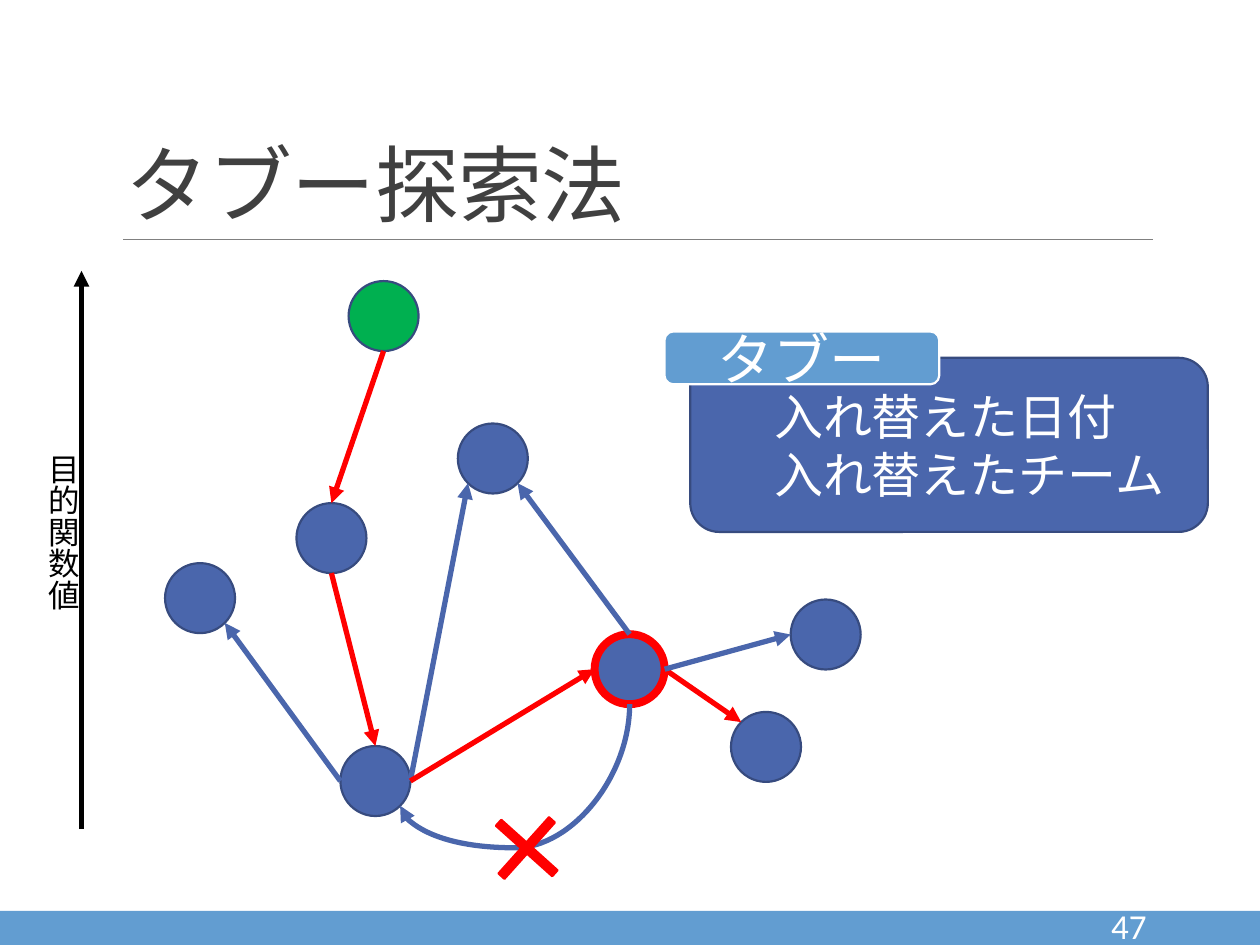
from dataclasses import dataclass
from math import sqrt

from lxml import etree
from pptx import Presentation
from pptx.dml.color import RGBColor
from pptx.enum.shapes import MSO_CONNECTOR, MSO_SHAPE
from pptx.enum.text import MSO_ANCHOR, PP_ALIGN
from pptx.oxml.ns import qn
from pptx.util import Pt

STRAIGHT, CURVE = MSO_CONNECTOR.STRAIGHT, MSO_CONNECTOR.CURVE
OVAL, RECT = MSO_SHAPE.OVAL, MSO_SHAPE.RECTANGLE
ROUNDED, PLUS = MSO_SHAPE.ROUNDED_RECTANGLE, MSO_SHAPE.CROSS
TOP, MIDDLE, BOTTOM = MSO_ANCHOR.TOP, MSO_ANCHOR.MIDDLE, MSO_ANCHOR.BOTTOM
LEFT, CENTER, RIGHT = PP_ALIGN.LEFT, PP_ALIGN.CENTER, PP_ALIGN.RIGHT


@dataclass(frozen=True)
class Theme:
    font: str = "Calibri"
    blue: str = "4A66AC"
    outline: str = "374B7F"
    sky: str = "629DD1"
    red: str = "FF0000"
    green: str = "00B050"
    gray: str = "808080"
    dark: str = "404040"
    black: str = "000000"
    white: str = "FFFFFF"
    title: int = 48
    label: int = 32
    body: int = 28
    number: int = 20
    axis: int = 18


THEME = Theme()
RADIUS = 20

# Node centres
NODES = {
    "base": (214.5, 446.3),
    "upper": (281.6, 262),
    "second": (189.4, 307.5),
    "start": (219.2, 180.6),
    "left": (114.3, 341.8),
    "current": (359.8, 382.4),
    "right": (471.8, 362.6),
    "lower": (437.7, 426.8),
}

# Moves from one node side to another; red ones form the search path
MOVES = [
    ("start", "S", "second", "N", THEME.red),
    ("second", "S", "base", "N", THEME.red),
    ("base", "E", "upper", "SW", THEME.blue),
    ("base", "W", "left", "SE", THEME.blue),
    ("base", "E", "current", "W", THEME.red),
    ("current", "E", "lower", "NW", THEME.red),
    ("current", "E", "right", "W", THEME.blue),
    ("current", "N", "upper", "SE", THEME.blue),
]


def rgb(value):
    return RGBColor.from_string(value)


def side_point(node, side):
    """Point on a node's rim in a compass direction."""
    x, y = NODES[node]
    reach = RADIUS / sqrt(len(side))
    dx = ("E" in side) - ("W" in side)
    dy = ("S" in side) - ("N" in side)
    return x + dx * reach, y + dy * reach


def write(box, text, size, color, align=LEFT, anchor=TOP):
    frame = box.text_frame
    frame.word_wrap = True
    frame.vertical_anchor = anchor
    para = frame.paragraphs[0]
    para.text = text
    para.alignment = align
    para.font.name = THEME.font
    para.font.size = Pt(size)
    para.font.color.rgb = rgb(color)
    return para


def add_text(page, bounds, *args, **options):
    box = page.shapes.add_textbox(*map(Pt, bounds))
    return box, write(box, *args, **options)


def add_block(page, kind, bounds, fill, line=None, width=1.25):
    block = page.shapes.add_shape(kind, *map(Pt, bounds))
    block.shadow.inherit = False
    block.fill.solid()
    block.fill.fore_color.rgb = rgb(fill)
    if line:
        block.line.color.rgb = rgb(line)
        block.line.width = Pt(width)
    else:
        block.line.fill.background()
    return block


def add_line(page, start, end, color, width=3, arrow=True, kind=STRAIGHT):
    line = page.shapes.add_connector(kind, *map(Pt, (*start, *end)))
    line.line.color.rgb = rgb(color)
    line.line.width = Pt(width)
    properties = line._element.spPr
    etree.SubElement(properties, qn("a:effectLst"))
    if arrow:
        outline = properties.find(qn("a:ln"))
        etree.SubElement(outline, qn("a:tailEnd"), type="triangle")
    return line


def add_return_curve(page, start, end, color, bend):
    """Curved arrow that leaves downwards: a quarter-turned connector."""
    (x1, y1), (x2, y2) = start, end
    middle_x, middle_y = (x1 + x2) / 2, (y1 + y2) / 2
    half_w, half_h = (y2 - y1) / 2, (x1 - x2) / 2
    curve = add_line(page, (middle_x - half_w, middle_y - half_h),
                     (middle_x + half_w, middle_y + half_h), color, kind=CURVE)
    properties = curve._element.spPr
    properties.find(qn("a:xfrm")).set("rot", str(90 * 60000))
    guides = properties.find(qn("a:prstGeom")).find(qn("a:avLst"))
    etree.SubElement(guides, qn("a:gd"), name="adj1",
                     fmla=f"val {round(bend * 100000)}")


def add_frame(page):
    # Footer band, title with rule, slide number
    add_block(page, RECT, (0, 520.5, 720, 19.5), THEME.sky)
    add_line(page, (70.5, 136.8), (658.8, 136.8), THEME.gray, 0.5, arrow=False)
    _, para = add_text(page, (64.8, 22.3, 594, 114.5), "タブー探索法",
                       THEME.title, THEME.dark, anchor=BOTTOM)
    para.line_spacing = 0.85
    for span in para.runs:
        span._r.get_or_add_rPr().set("spc", "-50")
    add_text(page, (604.8, 520.5, 57.6, 17.3), "47", THEME.number,
             THEME.white, align=RIGHT, anchor=MIDDLE)


def add_axis(page):
    add_line(page, (46.6, 473.8), (46.6, 154.8), THEME.black)
    box, _ = add_text(page, (14.4, 252, 36, 124.6), "目的関数値",
                      THEME.axis, THEME.black)
    box.text_frame._txBody.bodyPr.set("vert", "eaVert")


def add_graph(page):
    for name, (x, y) in NODES.items():
        bounds = (x - RADIUS, y - RADIUS, 2 * RADIUS, 2 * RADIUS)
        fill = THEME.green if name == "start" else THEME.blue
        if name == "current":
            add_block(page, OVAL, bounds, fill, THEME.red, 4.5)
        else:
            add_block(page, OVAL, bounds, fill, THEME.outline)
    for source, leave, target, enter, color in MOVES:
        add_line(page, side_point(source, leave), side_point(target, enter), color)

    # Forbidden move back, crossed out
    add_return_curve(page, side_point("current", "S"),
                     side_point("base", "SE"), THEME.blue, 1.414)
    cross = add_block(page, PLUS, (279.4, 463, 43.2, 43.2), THEME.red, THEME.red)
    cross.adjustments[0] = 0.447
    cross.rotation = 41.9


def add_tabu_panel(page):
    panel = add_block(page, ROUNDED, (394.4, 204.5, 295.8, 99.5),
                      THEME.blue, THEME.outline)
    para = write(panel, "入れ替えた日付\v入れ替えたチーム", THEME.body,
                 THEME.white, anchor=MIDDLE)
    para.level = 1
    indent = para._p.get_or_add_pPr()
    indent.set("marL", str(Pt(36)))
    indent.set("indent", "0")
    label = add_block(page, ROUNDED, (379.7, 189.4, 157, 30.2),
                      THEME.sky, THEME.white)
    write(label, "タブー", THEME.label, THEME.white, align=CENTER, anchor=MIDDLE)


def main():
    deck = Presentation()
    deck.slide_width, deck.slide_height = Pt(720), Pt(540)
    page = deck.slides.add_slide(deck.slide_layouts[6])
    add_frame(page)
    add_graph(page)
    add_axis(page)
    add_tabu_panel(page)
    deck.save("out.pptx")


if __name__ == "__main__":
    main()
